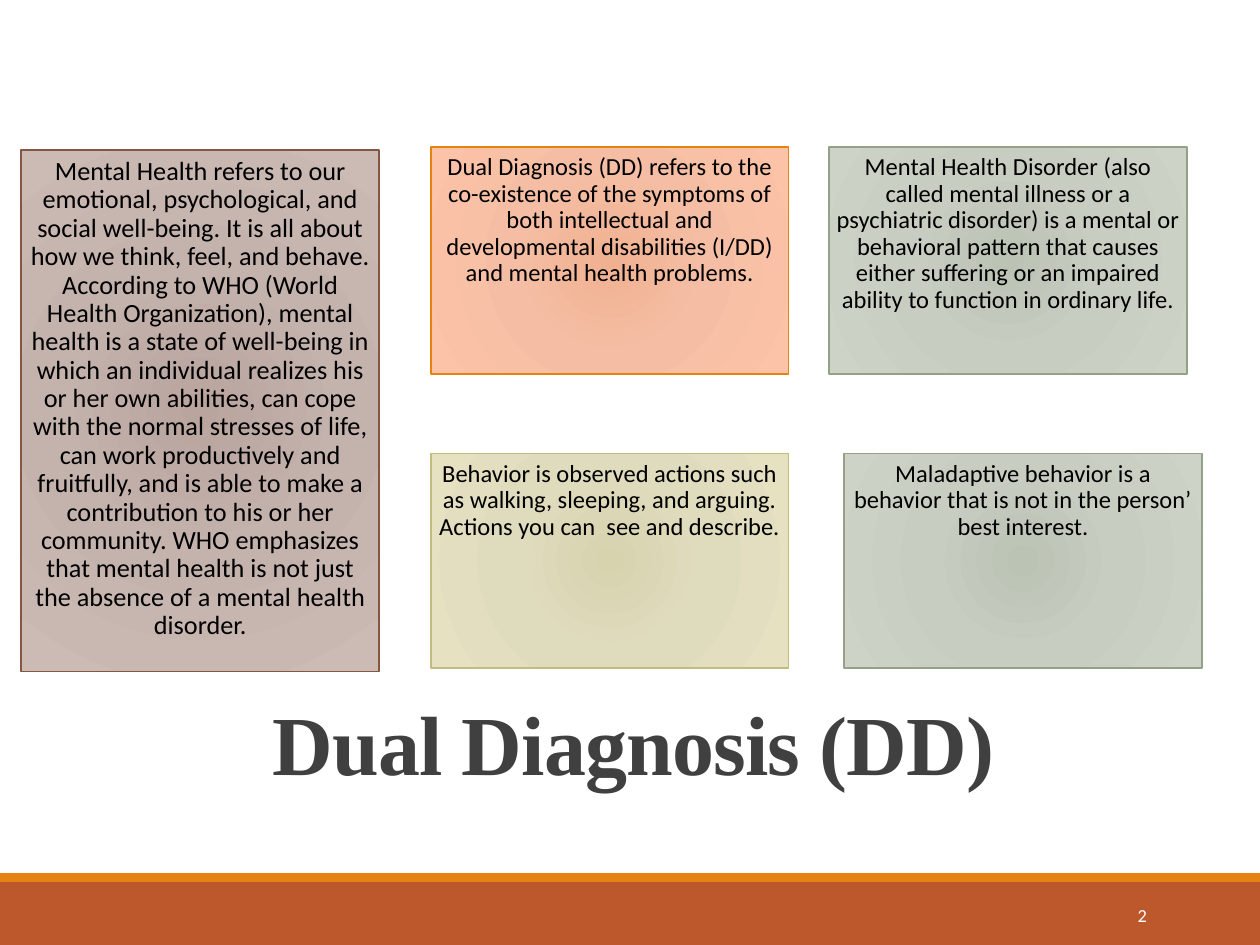
"""Build the Dual Diagnosis definitions slide."""
import pptx
import pptx.dml.color
import pptx.enum.shapes
import pptx.enum.text
import pptx.oxml
import pptx.oxml.ns
import pptx.util

Pt = pptx.util.Pt
ALIGN = pptx.enum.text.PP_ALIGN
ANCHOR = pptx.enum.text.MSO_ANCHOR

TITLE = "Dual Diagnosis (DD)"
PAGE_NUMBER = "2"
BANDS = [(504, 36, "BD582C"), (499, 5, "E48312")]
CARD_WIDTH = 204.5
STOP_POSITIONS = (0, 45, 100)
PALETTES = {
    "orange": ("E48312", ("F0B191", "F5BEA4", "FDC3A8")),
    "brown": ("865640", ("B9A49E", "C4B2AD", "CCBAB5")),
    "green": ("94A088", ("BBC3B5", "C7CDC1", "CDD4C7")),
    "olive": ("C2BC80", ("D7D3AF", "DFDBBD", "E5E1C1")),
}
UPPER_ROW, LOWER_ROW = (84.2, 129.6), (259.2, 122.4)
CARDS = [
    (246.2, UPPER_ROW, "orange", 14,
     "Dual Diagnosis (DD) refers to the co-existence of the symptoms of both "
     "intellectual and developmental disabilities (I/DD) and mental health problems."),
    (12.2, (85.7, 298), "brown", 15,
     "Mental Health refers to our emotional, psychological, and social well-being. "
     "It is all about how we think, feel, and behave. According to WHO (World Health "
     "Organization), mental health is a state of well-being in which an individual "
     "realizes his or her own abilities, can cope with the normal stresses of life, "
     "can work productively and fruitfully, and is able to make a contribution to his "
     "or her community. WHO emphasizes that mental health is not just the absence of "
     "a mental health disorder."),
    (473.8, UPPER_ROW, "green", 14,
     "Mental Health Disorder (also called mental illness or a psychiatric disorder) is "
     "a mental or behavioral pattern that causes either suffering or an impaired "
     "ability to function in ordinary life."),
    (246.2, LOWER_ROW, "olive", 14,
     "Behavior is observed actions such as walking, sleeping, and arguing. "
     "Actions you can  see and describe."),
    (482.4, LOWER_ROW, "green", 14,
     "Maladaptive behavior is a behavior that is not in the person’ best interest."),
]


def rgb(value):
    """Return the colour for a hex string."""
    return pptx.dml.color.RGBColor.from_string(value)


def write_text(shape, text, size, font="Calibri", color="000000", bold=False,
               align=ALIGN.CENTER, anchor=ANCHOR.TOP, line_spacing=1.0,
               inset=None, tracking=None):
    """Put one formatted paragraph into a shape."""
    frame = shape.text_frame
    frame.word_wrap = True
    frame.auto_size = pptx.enum.text.MSO_AUTO_SIZE.NONE
    frame.vertical_anchor = anchor
    if inset is not None:
        frame.margin_left = frame.margin_right = Pt(inset)
        frame.margin_top = frame.margin_bottom = Pt(inset)
    paragraph = frame.paragraphs[0]
    paragraph.alignment = align
    paragraph.line_spacing = line_spacing
    run = paragraph.add_run()
    run.text = text
    run.font.name = font
    run.font.size = Pt(size)
    run.font.bold = bold
    run.font.color.rgb = rgb(color)
    if tracking is not None:
        run.font._element.set("spc", str(round(tracking * 100)))


def add_rectangle(slide, left, top, width, height):
    """Add a rectangle without shadow, fill or line."""
    shape = slide.shapes.add_shape(pptx.enum.shapes.MSO_SHAPE.RECTANGLE,
                                   Pt(left), Pt(top), Pt(width), Pt(height))
    shape.shadow.inherit = False
    shape.fill.background()
    shape.line.fill.background()
    return shape


def fill_radial(shape, colors):
    """Replace the empty fill of a shape by a circular gradient."""
    stops = "".join(
        f'<a:gs pos="{position * 1000}"><a:srgbClr val="{color}"/></a:gs>'
        for position, color in zip(STOP_POSITIONS, colors))
    gradient = pptx.oxml.parse_xml(
        f'<a:gradFill {pptx.oxml.ns.nsdecls("a")} rotWithShape="1">'
        f'<a:gsLst>{stops}</a:gsLst><a:path path="circle">'
        '<a:fillToRect l="100000" t="100000" r="100000" b="100000"/>'
        '</a:path></a:gradFill>')
    properties = shape._element.spPr
    properties.replace(properties.find(pptx.oxml.ns.qn("a:noFill")), gradient)


def add_card(slide, left, row, palette, size, text):
    """Add one definition card."""
    top, height = row
    line_color, gradient_colors = PALETTES[palette]
    card = add_rectangle(slide, left, top, CARD_WIDTH, height)
    fill_radial(card, gradient_colors)
    card.line.color.rgb = rgb(line_color)
    card.line.width = Pt(1)
    write_text(card, text, size, line_spacing=0.9, inset=0.3 * size)


def main():
    """Build and save the presentation."""
    presentation = pptx.Presentation()
    presentation.slide_width, presentation.slide_height = Pt(720), Pt(540)
    slide = presentation.slides.add_slide(presentation.slide_layouts[5])

    for top, height, color in BANDS:
        band = add_rectangle(slide, 0, top, 720, height)
        band.fill.solid()
        band.fill.fore_color.rgb = rgb(color)

    title = slide.shapes.title
    title.left, title.top, title.width, title.height = Pt(64.8), Pt(381.6), Pt(594), Pt(93.6)
    write_text(title, TITLE, 48, font="Times New Roman", color="404040", bold=True,
               anchor=ANCHOR.MIDDLE, line_spacing=0.85, tracking=-0.5)

    number = slide.shapes.add_textbox(Pt(584.6), Pt(508.3), Pt(77.8), Pt(28.8))
    write_text(number, PAGE_NUMBER, 10.5, color="FFFFFF", align=ALIGN.RIGHT,
               anchor=ANCHOR.MIDDLE)

    for card in CARDS:
        add_card(slide, *card)

    presentation.save("out.pptx")


if __name__ == "__main__":
    main()
